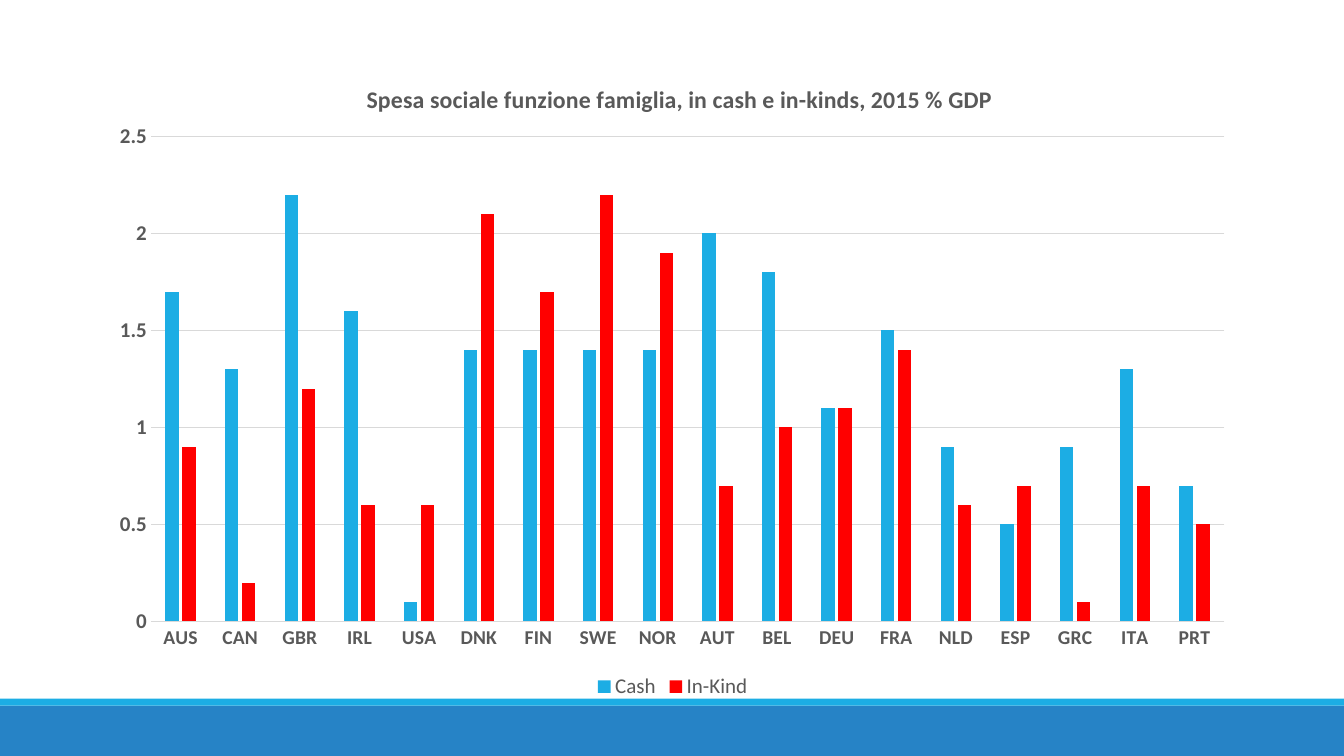
from dataclasses import dataclass

from lxml.etree import SubElement
from pptx import Presentation
from pptx.chart.data import CategoryChartData
from pptx.dml.color import RGBColor
from pptx.enum.chart import XL_CHART_TYPE, XL_LEGEND_POSITION, XL_TICK_MARK
from pptx.enum.shapes import MSO_SHAPE
from pptx.oxml.ns import qn
from pptx.util import Pt

COLORS = {
    "band": "2683C6",
    "cyan": "1CADE4",
    "red": "FF0000",
    "text": "595959",
    "grid": "D9D9D9",
}
WIDTH, HEIGHT = 960, 540
TITLE = "Spesa sociale funzione famiglia, in cash e in-kinds, 2015 % GDP"
COUNTRIES = ("AUS CAN GBR IRL USA DNK FIN SWE NOR "
             "AUT BEL DEU FRA NLD ESP GRC ITA PRT").split()


@dataclass
class Band:
    top: float
    height: float
    color: str


@dataclass
class Spending:
    name: str
    values: list[float]
    color: str


BANDS = [Band(504, 36, "band"), Band(499, 5, "cyan")]
SPENDING = [
    Spending("Cash", [1.7, 1.3, 2.2, 1.6, 0.1, 1.4, 1.4, 1.4, 1.4,
                      2, 1.8, 1.1, 1.5, 0.9, 0.5, 0.9, 1.3, 0.7], "cyan"),
    Spending("In-Kind", [0.9, 0.2, 1.2, 0.6, 0.6, 2.1, 1.7, 2.2, 1.9,
                         0.7, 1, 1.1, 1.4, 0.6, 0.7, 0.1, 0.7, 0.5], "red"),
]


def rgb(name: str) -> RGBColor:
    return RGBColor.from_string(COLORS[name])


def set_font(font, size: float, bold: bool) -> None:
    font.name = "Calibri"
    font.size = Pt(size)
    font.bold = bold
    font.color.rgb = rgb("text")


def set_line(fmt) -> None:
    fmt.line.color.rgb = rgb("grid")
    fmt.line.width = Pt(0.75)


def set_layout(parent, index: int, **settings) -> None:
    for old in parent.findall(qn("c:layout")):
        parent.remove(old)
    layout = SubElement(parent, qn("c:layout"))
    parent.insert(index, layout)
    manual = SubElement(layout, qn("c:manualLayout"))
    for tag, value in settings.items():
        SubElement(manual, qn(f"c:{tag}")).set("val", str(value))


def draw_band(s, band: Band) -> None:
    sp = s.shapes.add_shape(MSO_SHAPE.RECTANGLE, 0, Pt(band.top),
                            Pt(WIDTH), Pt(band.height))
    sp.shadow.inherit = False
    sp.fill.solid()
    sp.fill.fore_color.rgb = rgb(band.color)
    sp.line.fill.background()


def draw_chart(s, spending: list[Spending]) -> None:
    data = CategoryChartData(number_format="General")
    data.categories = COUNTRIES
    for item in spending:
        data.add_series(item.name, item.values)
    chart = s.shapes.add_chart(XL_CHART_TYPE.COLUMN_CLUSTERED, Pt(70), Pt(37.5),
                               Pt(821), Pt(465), data).chart
    chart.font.name = "Calibri"
    chart.font.size = Pt(10)

    tf = chart.chart_title.text_frame
    tf.text = TITLE
    set_font(tf.paragraphs[0].font, 17, True)

    plot = chart.plots[0]
    plot.gap_width = 219
    plot.overlap = -27
    plot.vary_by_categories = False
    for series, item in zip(plot.series, spending):
        series.format.fill.solid()
        series.format.fill.fore_color.rgb = rgb(item.color)
        series.invert_if_negative = False

    root = chart.element
    set_layout(root.find(f".//{qn('c:title')}"), 1,
               xMode="edge", yMode="edge", x=0.23, y=0.04)
    set_layout(root.find(f".//{qn('c:plotArea')}"), 0,
               layoutTarget="inner", xMode="edge", yMode="edge",
               x=0.046, y=0.129, w=0.934, h=0.745)

    for axis, size in ((chart.category_axis, 14), (chart.value_axis, 15)):
        axis.major_tick_mark = XL_TICK_MARK.NONE
        axis.minor_tick_mark = XL_TICK_MARK.NONE
        set_font(axis.tick_labels.font, size, True)
    set_line(chart.category_axis.format)
    axis = chart.value_axis
    axis.format.line.fill.background()
    axis.minimum_scale, axis.maximum_scale, axis.major_unit = 0, 2.5, 0.5
    set_line(axis.major_gridlines.format)

    chart.has_legend = True
    chart.legend.position = XL_LEGEND_POSITION.BOTTOM
    chart.legend.include_in_layout = False
    set_font(chart.legend.font, 15, False)


def main() -> None:
    prs = Presentation()
    prs.slide_width, prs.slide_height = Pt(WIDTH), Pt(HEIGHT)
    s = prs.slides.add_slide(prs.slide_layouts[6])
    for band in BANDS:
        draw_band(s, band)
    draw_chart(s, SPENDING)
    prs.save("out.pptx")


if __name__ == "__main__":
    main()
